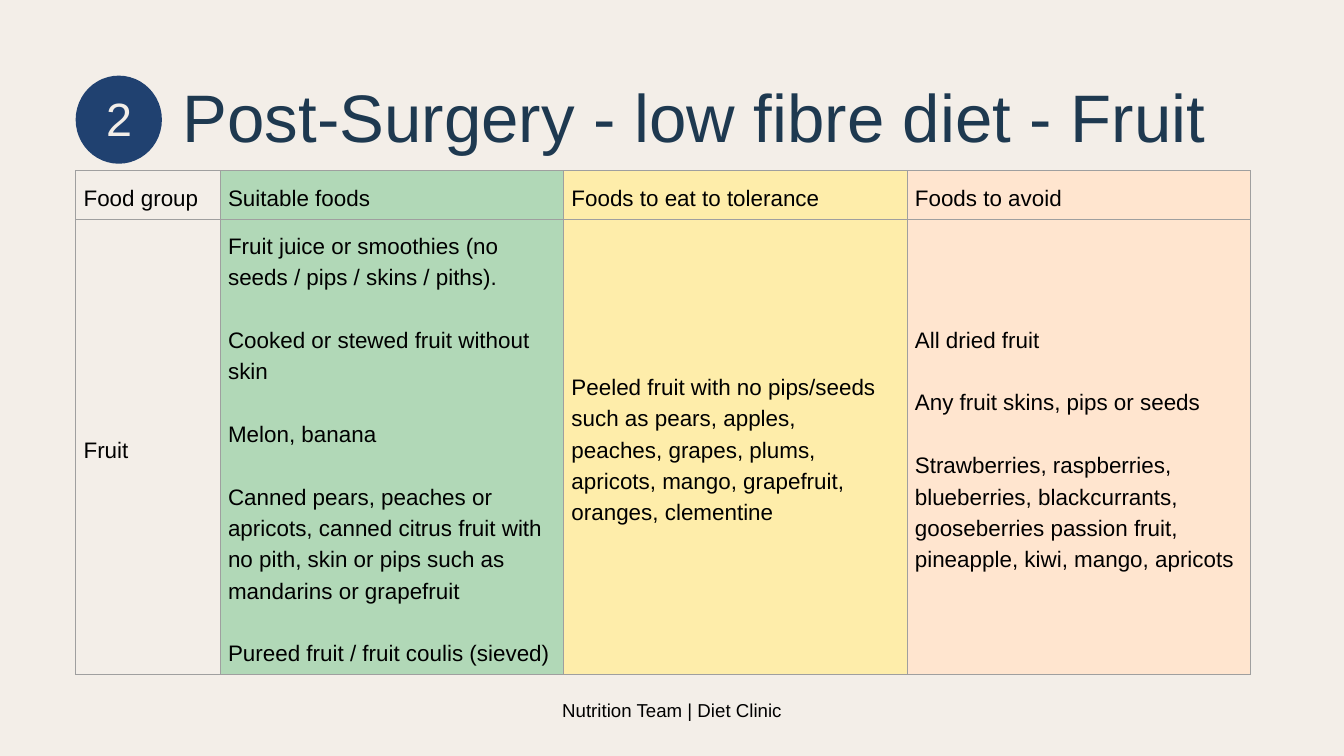
from lxml.etree import SubElement
from pptx import Presentation
from pptx.dml.color import RGBColor
from pptx.enum.shapes import MSO_SHAPE
from pptx.enum.text import MSO_ANCHOR, MSO_AUTO_SIZE, PP_ALIGN
from pptx.oxml.ns import qn
from pptx.util import Cm, Pt

CREAM = RGBColor(0xF3, 0xEE, 0xE8)
BLUE = RGBColor(0x20, 0x41, 0x70)
NAVY = RGBColor(0x1E, 0x39, 0x50)
BLACK = RGBColor(0, 0, 0)
GREEN = RGBColor(0xB1, 0xD8, 0xB7)
YELLOW = RGBColor(0xFE, 0xED, 0xAA)
PEACH = RGBColor(0xFF, 0xE5, 0xCF)
BORDER = "9F9F9F"
FONT = "Arial"

# Content
NUMBER = "2"
TITLE = "Post-Surgery - low fibre diet - Fruit"
FOOTER = "Nutrition Team | Diet Clinic"

# Columns: width, fill, header, body blocks (each a list of paragraphs)
COLUMNS = [
    (5.46, None, "Food group", [["Fruit"]]),
    (12.98, GREEN, "Suitable foods", [
        ["Fruit juice or smoothies (no seeds / pips / skins / piths)."],
        ["Cooked or stewed fruit without skin"],
        ["Melon, banana"],
        ["Canned pears, peaches or apricots, canned citrus fruit with "
         "no pith, skin or pips such as mandarins or grapefruit"],
        ["Pureed fruit / fruit coulis (sieved)"],
    ]),
    (12.98, YELLOW, "Foods to eat to tolerance", [
        ["Peeled fruit with no pips/seeds",
         "such as pears, apples,",
         "peaches, grapes, plums,",
         "apricots, mango, grapefruit,",
         "oranges, clementine"],
    ]),
    (12.98, PEACH, "Foods to avoid", [
        ["All dried fruit"],
        ["Any fruit skins, pips or seeds"],
        ["Strawberries, raspberries,",
         "blueberries, blackcurrants, gooseberries passion fruit, "
         "pineapple, kiwi, mango, apricots"],
    ]),
]
ROW_HEIGHTS = [1.85, 17.2]
MARGIN = 2.86
TABLE_TOP = 6.45
TABLE_LINE = 33.6


def style(p, size, color, line, align=PP_ALIGN.LEFT):
    p.alignment = align
    p.line_spacing = Pt(line)
    for r in p.runs:
        r.font.name, r.font.size = FONT, Pt(size)
        r.font.color.rgb = color


def set_text(sp, text, size, color, line, align, anchor=MSO_ANCHOR.TOP):
    tf = sp.text_frame
    tf.text = text
    tf.word_wrap = True
    tf.auto_size = MSO_AUTO_SIZE.NONE
    tf.vertical_anchor = anchor
    tf.margin_left = tf.margin_right = tf.margin_top = tf.margin_bottom = 0
    style(tf.paragraphs[0], size, color, line, align)


def fill_cell(cell, blocks, color):
    cell.vertical_anchor = MSO_ANCHOR.MIDDLE
    cell.margin_left = cell.margin_right = Cm(0.3)
    cell.margin_top = cell.margin_bottom = Cm(0.3)
    tf = cell.text_frame
    tf.text = "\n".join(line for block in blocks for line in block)
    for p in tf.paragraphs:
        style(p, 24, BLACK, TABLE_LINE)
    # One empty line's height between blocks
    start = 0
    for block in blocks[:-1]:
        start += len(block)
        tf.paragraphs[start].space_before = Pt(TABLE_LINE)
    # Borders come before the fill in the cell properties
    tc_pr = cell._tc.get_or_add_tcPr()
    for side in ("a:lnL", "a:lnR", "a:lnT", "a:lnB"):
        ln = SubElement(tc_pr, qn(side), w=str(Pt(0.75)))
        SubElement(SubElement(ln, qn("a:solidFill")), qn("a:srgbClr"), val=BORDER)
    if color is None:
        cell.fill.background()
    else:
        cell.fill.solid()
        cell.fill.fore_color.rgb = color


def main():
    prs = Presentation()
    prs.slide_width, prs.slide_height = Cm(50.8), Cm(28.58)
    s = prs.slides.add_slide(prs.slide_layouts[5])
    s.background.fill.solid()
    s.background.fill.fore_color.rgb = CREAM

    # Numbered badge
    badge = s.shapes.add_shape(MSO_SHAPE.OVAL, Cm(MARGIN), Cm(MARGIN), Cm(3.26), Cm(3.33))
    badge.shadow.inherit = False
    badge.fill.solid()
    badge.fill.fore_color.rgb = BLUE
    badge.line.fill.background()
    number = s.shapes.add_textbox(Cm(3.18), Cm(2.77), Cm(2.64), Cm(3.02))
    set_text(number, NUMBER, 50, CREAM, 70, PP_ALIGN.CENTER, MSO_ANCHOR.MIDDLE)

    # Title
    title = s.shapes.title
    title.left, title.top = Cm(6.91), Cm(MARGIN)
    title.width, title.height = Cm(40.39), Cm(3.05)
    set_text(title, TITLE, 72, NAVY, 86.4, PP_ALIGN.LEFT)

    # Food table
    widths = [column[0] for column in COLUMNS]
    table = s.shapes.add_table(
        len(ROW_HEIGHTS), len(COLUMNS), Cm(MARGIN), Cm(TABLE_TOP),
        Cm(sum(widths)), Cm(sum(ROW_HEIGHTS))).table
    table.first_row = table.horz_banding = False
    for row, height in zip(table.rows, ROW_HEIGHTS):
        row.height = Cm(height)
    for i, (width, color, header, body) in enumerate(COLUMNS):
        table.columns[i].width = Cm(width)
        fill_cell(table.cell(0, i), [[header]], color)
        fill_cell(table.cell(1, i), body, color)

    # Footer
    footer = s.shapes.add_textbox(Cm(12.27), Cm(26.29), Cm(26.26), Cm(0.99))
    set_text(footer, FOOTER, 20, BLACK, 28, PP_ALIGN.CENTER)

    prs.save("out.pptx")


if __name__ == "__main__":
    main()
